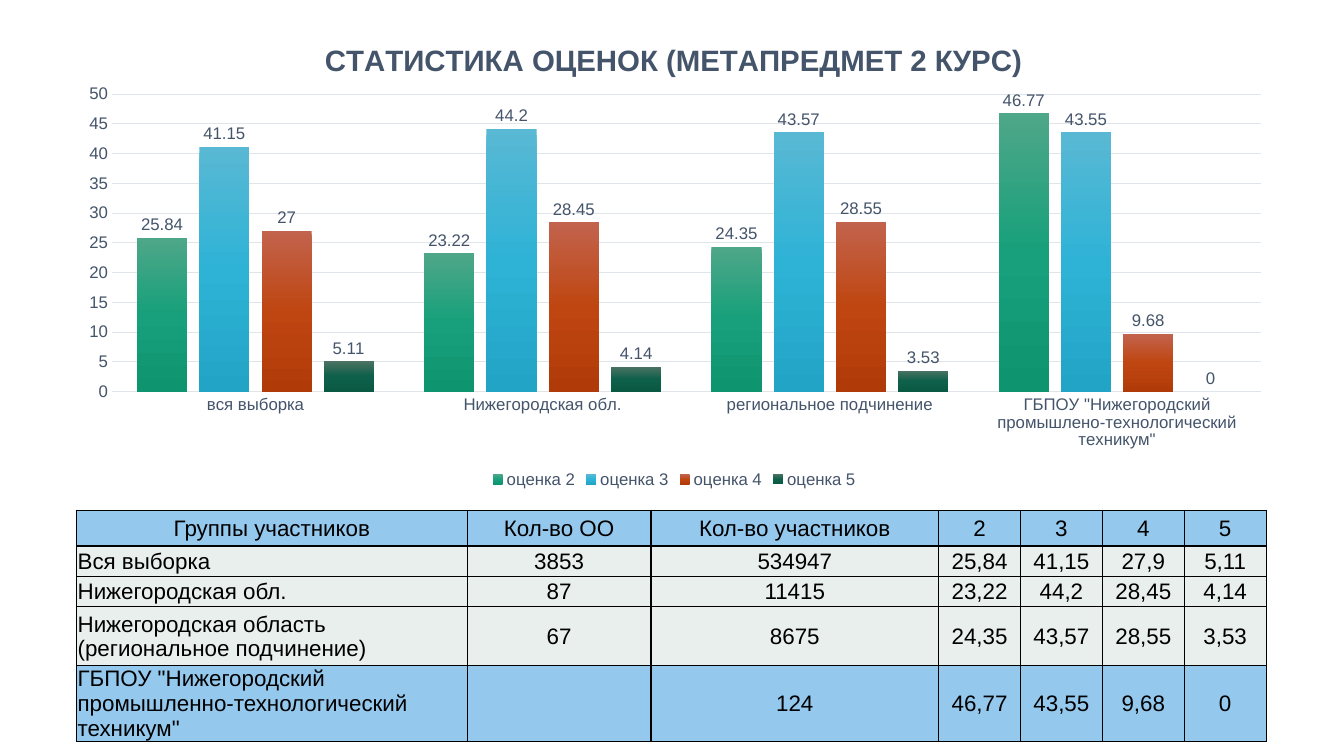
from lxml import etree
from pptx import Presentation
from pptx.chart.data import CategoryChartData
from pptx.dml.color import RGBColor
from pptx.enum.chart import XL_CHART_TYPE, XL_LABEL_POSITION, XL_LEGEND_POSITION, XL_TICK_MARK
from pptx.enum.text import MSO_ANCHOR, PP_ALIGN
from pptx.oxml import parse_xml
from pptx.util import Pt

COLUMNS = XL_CHART_TYPE.COLUMN_CLUSTERED
OUTSIDE = XL_LABEL_POSITION.OUTSIDE_END
BOTTOM = XL_LEGEND_POSITION.BOTTOM
NO_TICK = XL_TICK_MARK.NONE
MIDDLE = MSO_ANCHOR.MIDDLE
LEFT, CENTER = PP_ALIGN.LEFT, PP_ALIGN.CENTER

PX = 9525
NS_A = "http://schemas.openxmlformats.org/drawingml/2006/main"
NS_C = "http://schemas.openxmlformats.org/drawingml/2006/chart"
SLATE, GRID, BLACK = "44546A", "E0E5EB", "000000"
BLUE, PALE = "94C8ED", "E8EFEC"

TITLE = "СТАТИСТИКА ОЦЕНОК (МЕТАПРЕДМЕТ 2 КУРС)"
CATEGORIES = [
    "вся выборка",
    "Нижегородская обл.",
    "региональное подчинение",
    'ГБПОУ "Нижегородский промышлено-технологический техникум"',
]
SERIES = [
    ("оценка 2", (25.84, 23.22, 24.35, 46.77), ("4EA788", "17A07B", "0F9470")),
    ("оценка 3", (41.15, 44.2, 43.57, 43.55), ("59B8D4", "2EB3D6", "21A4C6")),
    ("оценка 4", (27, 28.45, 28.55, 9.68), ("C2634D", "BF4611", "B13B08")),
    ("оценка 5", (5.11, 4.14, 3.53, 0), ("4C7263", "0E604A", "095943")),
]
COL_WIDTHS = [372, 175, 274, 78, 78, 78, 78]
ROWS = [
    (34, BLUE, ["Группы участников", "Кол-во ОО", "Кол-во участников", "2", "3", "4", "5"]),
    (29, PALE, ["Вся выборка", "3853", "534947", "25,84", "41,15", "27,9", "5,11"]),
    (29, PALE, ["Нижегородская обл.", "87", "11415", "23,22", "44,2", "28,45", "4,14"]),
    (56, PALE, ["Нижегородская область (региональное подчинение)",
                "67", "8675", "24,35", "43,57", "28,55", "3,53"]),
    (66, BLUE, ['ГБПОУ "Нижегородский промышленно-технологический техникум"',
                "", "124", "46,77", "43,55", "9,68", "0"]),
]


def px(*lengths):
    """Turn px lengths into EMU."""
    return [n * PX for n in lengths]


def rgb(value):
    """Turn a hex string into a colour."""
    return RGBColor.from_string(value)


def style_font(font, size, color, bold=False):
    """Format a font in Arial."""
    for name, value in {"name": "Arial", "size": Pt(size), "bold": bold}.items():
        setattr(font, name, value)
    font.color.rgb = rgb(color)


def style_line(line, color, width):
    """Give a line its colour and width in points."""
    line.color.rgb = rgb(color)
    line.width = Pt(width)


def fill_gradient(series, colors):
    """Fill a series with an even vertical gradient."""
    step = 100000 // (len(colors) - 1)
    stops = "".join(
        f'<a:gs pos="{i * step}"><a:srgbClr val="{c}"/></a:gs>' for i, c in enumerate(colors)
    )
    series._element.get_or_add_spPr().insert(0, parse_xml(
        f'<a:gradFill xmlns:a="{NS_A}" rotWithShape="1"><a:gsLst>{stops}</a:gsLst>'
        '<a:lin ang="5400000" scaled="0"/></a:gradFill>'
    ))


def set_layout(element, index, **values):
    """Place a chart part by fractions of the chart area."""
    for old in element.findall(f"{{{NS_C}}}layout"):
        element.remove(old)
    layout = etree.Element(f"{{{NS_C}}}layout")
    manual = etree.SubElement(layout, f"{{{NS_C}}}manualLayout")
    for name, value in values.items():
        etree.SubElement(manual, f"{{{NS_C}}}{name}").set("val", str(value))
    element.insert(index, layout)


def add_grade_chart(s, x, y, w, h):
    """Draw the grouped columns of grades in the given box."""
    data = CategoryChartData()
    data.categories = CATEGORIES
    for name, values, _ in SERIES:
        data.add_series(name, values)
    chart = s.shapes.add_chart(COLUMNS, *px(x, y, w, h), data).chart
    style_font(chart.font, 12, SLATE)

    chart.has_title = True
    tf = chart.chart_title.text_frame
    tf.text = TITLE
    style_font(tf.paragraphs[0].runs[0].font, 21, SLATE, True)
    chart.chart_title.include_in_layout = False
    set_layout(chart.chart_title._element, 1, xMode="edge", yMode="edge", x=0.21, y=0.05)

    chart.has_legend = True
    chart.legend.position = BOTTOM
    chart.legend.include_in_layout = False
    style_font(chart.legend.font, 12, SLATE)

    for axis in (chart.category_axis, chart.value_axis):
        axis.major_tick_mark = axis.minor_tick_mark = NO_TICK
        style_font(axis.tick_labels.font, 12, SLATE)
    style_line(chart.category_axis.format.line, GRID, 0.75)
    values = chart.value_axis
    for name, value in {"minimum_scale": 0, "maximum_scale": 50, "major_unit": 5}.items():
        setattr(values, name, value)
    values.format.line.fill.background()
    style_line(values.major_gridlines.format.line, GRID, 0.75)

    plot = chart.plots[0]
    for name, value in {"gap_width": 100, "overlap": -24, "vary_by_categories": False}.items():
        setattr(plot, name, value)
    for series, (_, _, colors) in zip(plot.series, SERIES):
        fill_gradient(series, colors)
        labels = series.data_labels
        labels.show_value = True
        labels.position = OUTSIDE
        style_font(labels.font, 12, SLATE)
    set_layout(plot._element.getparent(), 0, layoutTarget="inner", xMode="edge",
               yMode="edge", x=0.04, y=0.17, w=0.94, h=0.62)


def add_borders(cell):
    """Draw a thin black border on all sides of a cell."""
    tc_pr = cell._tc.get_or_add_tcPr()
    for side in "LRTB":
        tc_pr.append(parse_xml(
            f'<a:ln{side} xmlns:a="{NS_A}" w="12700"><a:solidFill>'
            f'<a:srgbClr val="{BLACK}"/></a:solidFill></a:ln{side}>'
        ))


def add_grade_table(s, x, y):
    """Draw the table of groups with its top left corner at x, y."""
    w, h = sum(COL_WIDTHS), sum(row[0] for row in ROWS)
    table = s.shapes.add_table(len(ROWS), len(COL_WIDTHS), *px(x, y, w, h)).table
    table.first_row = table.horz_banding = False
    for column, width in zip(table.columns, COL_WIDTHS):
        column.width = width * PX
    for i, (height, color, texts) in enumerate(ROWS):
        table.rows[i].height = height * PX
        for j, text in enumerate(texts):
            cell = table.cell(i, j)
            add_borders(cell)
            cell.fill.solid()
            cell.fill.fore_color.rgb = rgb(color)
            cell.vertical_anchor = MIDDLE
            cell.margin_left = cell.margin_right = cell.margin_top = PX
            cell.margin_bottom = 0
            p = cell.text_frame.paragraphs[0]
            p.alignment = LEFT if i and not j else CENTER
            if text:
                r = p.add_run()
                r.text = text
                style_font(r.font, 16, BLACK)


def main():
    """Build the slide and save it."""
    prs = Presentation()
    prs.slide_width, prs.slide_height = px(1280, 720)
    s = prs.slides.add_slide(prs.slide_layouts[6])
    add_grade_chart(s, 60, 12, 1164, 457)
    add_grade_table(s, 73, 486)
    prs.save("out.pptx")


if __name__ == "__main__":
    main()
